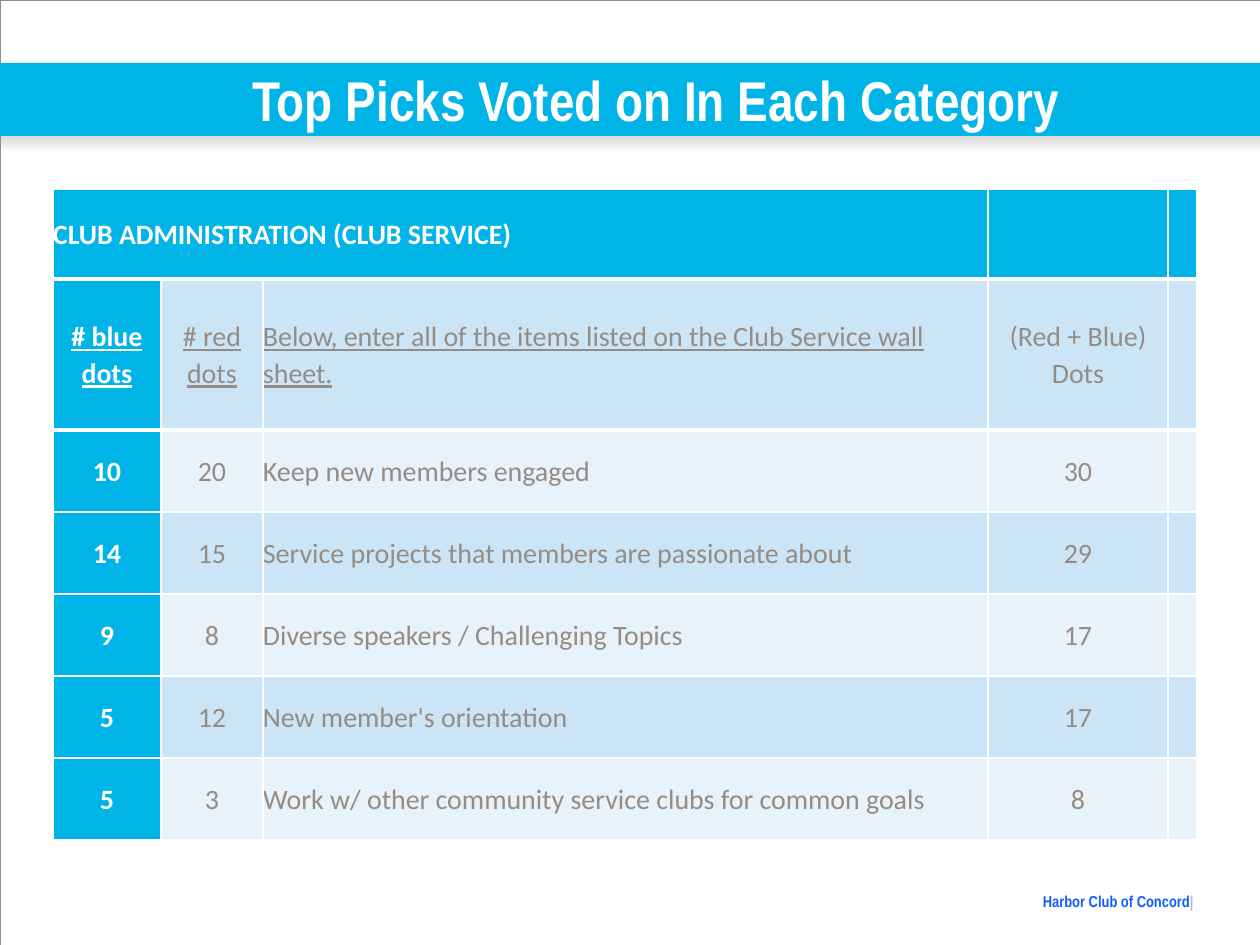
from lxml.etree import SubElement
from pptx import Presentation
from pptx.dml.color import RGBColor
from pptx.enum.shapes import MSO_SHAPE
from pptx.enum.text import MSO_ANCHOR, PP_ALIGN
from pptx.oxml import parse_xml
from pptx.oxml.ns import nsdecls, qn
from pptx.util import Pt

PX = 914400 / 126
BLUE, GREY, WHITE = "01B4E7", "958D85", "FFFFFF"
BANDS = ["E7F2FA", "CBE5F6"]

COLUMN_WIDTHS = [108, 102, 725, 180, 29]
ROW_HEIGHTS = [90, 151] + [82] * 5
ROWS = [
    ["CLUB ADMINISTRATION (CLUB SERVICE)", "", "", "", ""],
    ["# blue dots", "# red dots",
     "Below, enter all of the items listed on the Club Service wall sheet.",
     "(Red + Blue) Dots", ""],
    ["10", "20", "Keep new members engaged", "30", ""],
    ["14", "15", "Service projects that members are passionate about", "29", ""],
    ["9", "8", "Diverse speakers / Challenging Topics", "17", ""],
    ["5", "12", "New member's orientation", "17", ""],
    ["5", "3", "Work w/ other community service clubs for common goals", "8", ""],
]
THICK_RULES = (1, 2)  # rows with a heavy line above them


def px(length):
    return round(length * PX)


def rgb(hex_color):
    return RGBColor.from_string(hex_color)


def add_run(paragraph, text, color, **font_format):
    run = paragraph.add_run()
    run.text = text
    run.font.color.rgb = rgb(color)
    for name, value in font_format.items():
        setattr(run.font, name, value)


def add_label(slide, box, align, parts, size):
    frame = slide.shapes.add_textbox(*map(px, box)).text_frame
    settings = dict(word_wrap=True, vertical_anchor=MSO_ANCHOR.MIDDLE,
                    margin_left=0, margin_right=0, margin_top=0, margin_bottom=0)
    for name, value in settings.items():
        setattr(frame, name, value)
    paragraph = frame.paragraphs[0]
    paragraph.alignment = align
    for text, color in parts:
        add_run(paragraph, text, color, name="Arial Narrow", size=Pt(size), bold=True)


def add_rectangle(slide, box):
    rectangle = slide.shapes.add_shape(MSO_SHAPE.RECTANGLE, *map(px, box))
    rectangle.shadow.inherit = False
    return rectangle


def add_page_frame(slide):
    frame = add_rectangle(slide, (0, 0, 1260, 945))
    frame.fill.background()
    frame.line.color.rgb = rgb(GREY)
    frame.line.width = Pt(0.25)


def add_title_band(slide):
    band = add_rectangle(slide, (-10, 63, 1281, 73))
    band.fill.solid()
    band.fill.fore_color.rgb = rgb(BLUE)
    band.line.fill.background()
    # Soft shadow below the band
    effects = band._element.spPr.find(qn("a:effectLst"))
    effects.append(parse_xml(
        f'<a:outerShdw {nsdecls("a")} blurRad="{Pt(5)}" dist="{Pt(4.8)}" dir="5400000">'
        '<a:srgbClr val="808080"><a:alpha val="25000"/></a:srgbClr></a:outerShdw>'))


def set_borders(cell, row):
    widths = {"L": 1, "R": 1,
              "T": 3 if row in THICK_RULES else 1,
              "B": 3 if row + 1 in THICK_RULES else 1}
    properties = cell._tc.get_or_add_tcPr()
    for side, width in widths.items():
        line = SubElement(properties, qn(f"a:ln{side}"), w=str(Pt(width)))
        SubElement(SubElement(line, qn("a:solidFill")), qn("a:srgbClr"), val=WHITE)


def format_cell(cell, row, column, text):
    highlighted = row == 0 or column == 0
    settings = dict(vertical_anchor=MSO_ANCHOR.MIDDLE,
                    margin_left=0, margin_right=0, margin_top=0, margin_bottom=0)
    for name, value in settings.items():
        setattr(cell, name, value)
    set_borders(cell, row)
    cell.fill.solid()
    cell.fill.fore_color.rgb = rgb(BLUE if highlighted else BANDS[row % 2])
    if text:
        paragraph = cell.text_frame.paragraphs[0]
        left = row == 0 or column == 2
        paragraph.alignment = PP_ALIGN.LEFT if left else PP_ALIGN.CENTER
        paragraph.line_spacing = 1.07
        add_run(paragraph, text, WHITE if highlighted else GREY, name="Calibri",
                size=Pt(16), bold=highlighted, underline=row == 1 and column < 3)


def add_votes_table(slide):
    box = (53, 189, sum(COLUMN_WIDTHS), sum(ROW_HEIGHTS))
    votes = slide.shapes.add_table(
        len(ROWS), len(COLUMN_WIDTHS), *map(px, box)).table
    for column, width in zip(votes.columns, COLUMN_WIDTHS):
        column.width = px(width)
    for row, height in zip(votes.rows, ROW_HEIGHTS):
        row.height = px(height)
    for r, texts in enumerate(ROWS):
        for c, text in enumerate(texts):
            format_cell(votes.cell(r, c), r, c, text)
    votes.cell(0, 0).merge(votes.cell(0, 2))


def main():
    deck = Presentation()
    deck.slide_width, deck.slide_height = px(1260), px(945)
    slide = deck.slides.add_slide(deck.slide_layouts[6])
    # Footer
    add_label(slide, (977, 892, 220, 18), PP_ALIGN.RIGHT,
              [("Harbor Club of Concord", "0E5EFF"), ("| ", "BCBDC0")], 9)
    # Page frame and title
    add_page_frame(slide)
    add_title_band(slide)
    add_label(slide, (53, 63, 1207, 73), PP_ALIGN.CENTER,
              [("Top Picks Voted on In Each Category", WHITE)], 32)
    # Votes per item
    add_votes_table(slide)
    deck.save("out.pptx")


if __name__ == "__main__":
    main()
